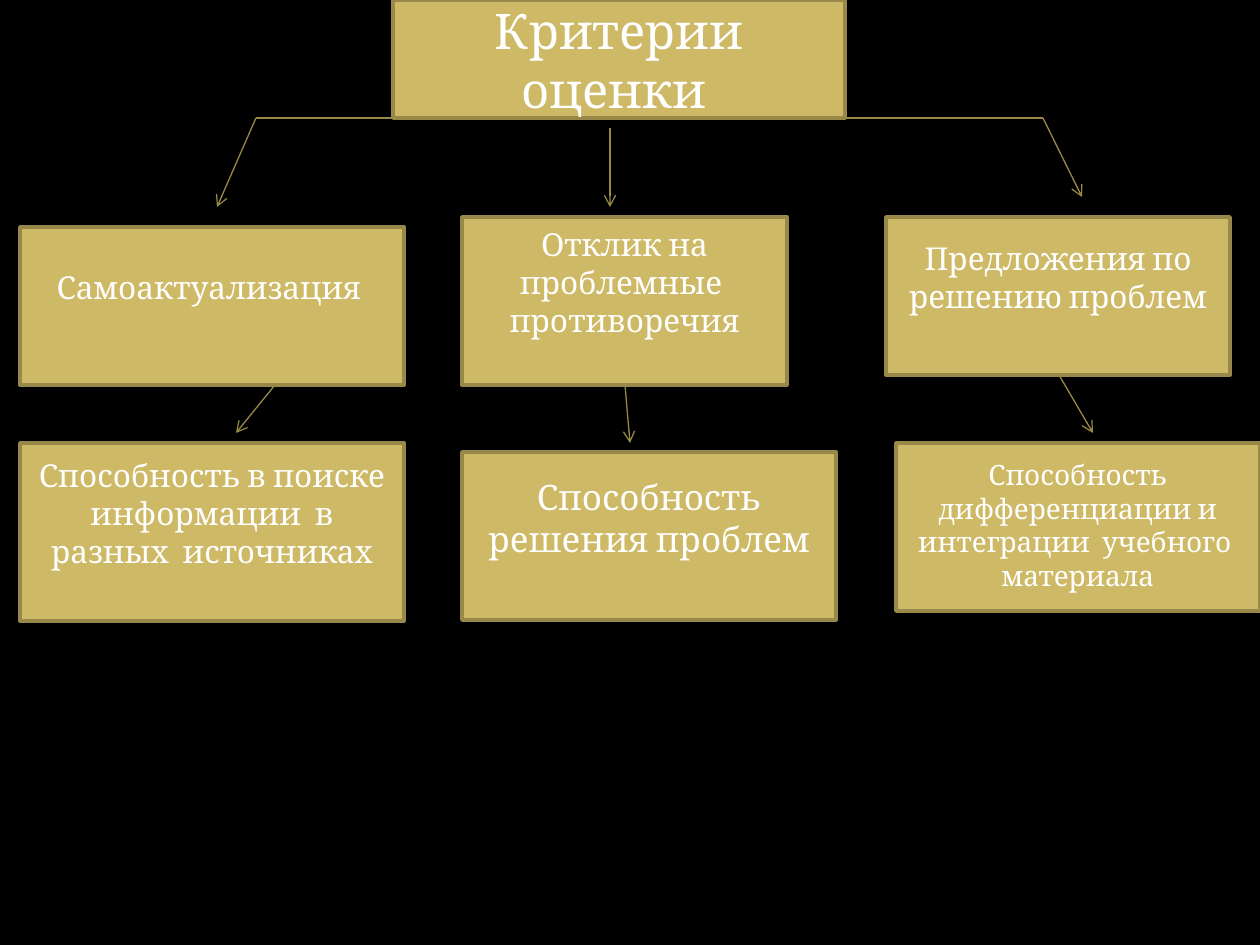
from lxml import etree
from pptx import Presentation
from pptx.dml.color import RGBColor
from pptx.enum.shapes import MSO_CONNECTOR, MSO_SHAPE
from pptx.enum.text import MSO_ANCHOR, PP_ALIGN
from pptx.oxml.ns import qn
from pptx.util import Pt

RECTANGLE = MSO_SHAPE.RECTANGLE
STRAIGHT = MSO_CONNECTOR.STRAIGHT
MIDDLE = MSO_ANCHOR.MIDDLE
CENTER = PP_ALIGN.CENTER

COLORS = {
    "page": "000000",
    "box": "CEB966",
    "border": "98894B",
    "arrow": "998946",
    "text": "FFFFFF",
}
FONT = "Cambria"
INSET = 6


def px(length):
    return round(length * 914400 / 126)


def color(name):
    return RGBColor.from_string(COLORS[name])


deck = Presentation()
deck.slide_width, deck.slide_height = px(1260), px(945)
page = deck.slides.add_slide(deck.slide_layouts[6])
page.background.fill.solid()
page.background.fill.fore_color.rgb = color("page")

# Boxes: left, top, width, height, font size, bottom inset, text
BOXES = [
    (393, 0, 452, 118, 28, INSET, "Критерии оценки "),
    (20, 227, 384, 158, 18, 44, "Самоактуализация "),
    (462, 217, 325, 168, 18, 44, "Отклик на проблемные  противоречия"),
    (886, 217, 344, 158, 18, 44, "Предложения по решению проблем"),
    (20, 443, 384, 178, 18, 44,
     "Способность в поиске информации  в разных  источниках"),
    (462, 452, 374, 168, 20, 44, "Способность решения проблем"),
    (896, 443, 364, 168, 16, 10,
     "Способность дифференциации и интеграции  учебного  материала"),
]
for left, top, width, height, size, bottom, text in BOXES:
    box = page.shapes.add_shape(RECTANGLE, px(left), px(top), px(width), px(height))
    box.shadow.inherit = False
    box.fill.solid()
    box.fill.fore_color.rgb = color("box")
    box.line.color.rgb = color("border")
    box.line.width = Pt(2)
    frame = box.text_frame
    frame_format = {
        "word_wrap": True,
        "vertical_anchor": MIDDLE,
        "margin_top": px(INSET),
        "margin_bottom": px(bottom),
    }
    for name, value in frame_format.items():
        setattr(frame, name, value)
    para = frame.paragraphs[0]
    para.alignment = CENTER
    span = para.add_run()
    span.text = text
    for name, value in {"name": FONT, "size": Pt(size)}.items():
        setattr(span.font, name, value)
    span.font.color.rgb = color("text")

# Lines: start x, start y, end x, end y, arrowhead
LINES = [
    (610, 128, 610, 207, True),
    (256, 118, 217, 207, True),
    (1043, 118, 1082, 197, True),
    (625, 385, 630, 443, True),
    (275, 385, 236, 433, True),
    (1059, 375, 1093, 433, True),
    (256, 118, 1043, 118, False),
]
for start_x, start_y, end_x, end_y, has_arrow in LINES:
    connector = page.shapes.add_connector(
        STRAIGHT, px(start_x), px(start_y), px(end_x), px(end_y))
    connector.line.color.rgb = color("arrow")
    connector.line.width = Pt(0.75)
    if has_arrow:
        outline = connector.line._get_or_add_ln()
        etree.SubElement(outline, qn("a:tailEnd"), type="arrow")
    etree.SubElement(connector._element.spPr, qn("a:effectLst"))

deck.save("out.pptx")
